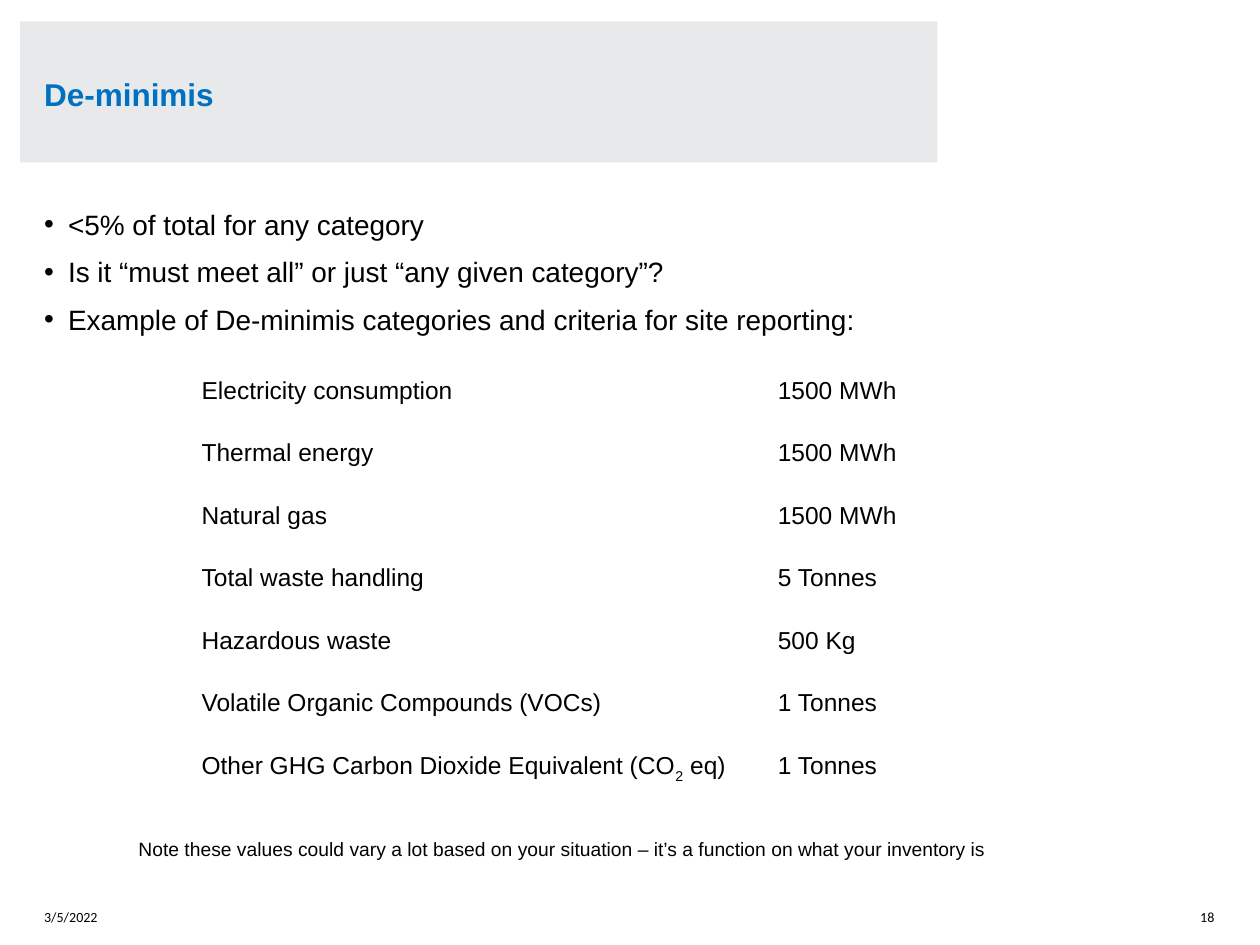
from lxml.etree import SubElement
from pptx import Presentation
from pptx.dml.color import RGBColor
from pptx.enum.shapes import MSO_SHAPE
from pptx.enum.text import MSO_ANCHOR, MSO_AUTO_SIZE, PP_ALIGN
from pptx.oxml.ns import qn
from pptx.util import Pt

COLORS = {"text": "000000", "title": "0070C0", "band": "E8E9EB", "border": "FFFFFF"}
BAND = (11.5, 12.2, 524.2, 80.6)
BULLETS = [
    "<5% of total for any category",
    "Is it “must meet all” or just “any given category”?",
    "Example of De-minimis categories and criteria for site reporting:",
]
# Each text is a list of runs; a (text, baseline) pair is a shifted run.
CRITERIA = [
    (["Electricity consumption"], ["1500 MWh"]),
    (["Thermal energy"], ["1500 MWh"]),
    (["Natural gas"], ["1500 MWh"]),
    (["Total waste handling"], ["5 Tonnes"]),
    (["Hazardous waste"], ["500 Kg"]),
    (["Volatile Organic Compounds (VOCs)"], ["1 Tonnes"]),
    (["Other GHG Carbon Dioxide Equivalent (CO", ("2", -25000), " eq)"], ["1 Tonnes"]),
]


class SlideBuilder:
    """Holds the text style and the current slide."""

    def __init__(self, slide, font="Arial", spacing=1.1):
        self.slide, self.font, self.spacing = slide, font, spacing

    def band(self, box):
        sp = self.slide.shapes.add_shape(MSO_SHAPE.RECTANGLE, *map(Pt, box))
        sp.shadow.inherit = False
        sp.fill.solid()
        sp.fill.fore_color.rgb = RGBColor.from_string(COLORS["band"])
        sp.line.fill.background()

    def add_runs(self, p, runs, size, color="text", bold=False, font=None):
        for item in runs:
            text, baseline = item if isinstance(item, tuple) else (item, 0)
            r = p.add_run()
            r.text = text
            r.font.name = font or self.font
            r.font.size = Pt(size)
            r.font.bold = bold
            r.font.color.rgb = RGBColor.from_string(COLORS[color])
            if baseline:
                r._r.get_or_add_rPr().set("baseline", str(baseline))

    def frame(self, box, insets=(0, 0), anchor=MSO_ANCHOR.TOP, wrap=True):
        """Add a text box; insets are horizontal and vertical."""
        tf = self.slide.shapes.add_textbox(*map(Pt, box)).text_frame
        tf.word_wrap = wrap
        tf.vertical_anchor = anchor
        tf.margin_left = tf.margin_right = Pt(insets[0])
        tf.margin_top = tf.margin_bottom = Pt(insets[1])
        return tf

    def title(self, box, text):
        p = self.frame(box, (13.7, 0), MSO_ANCHOR.MIDDLE).paragraphs[0]
        p.line_spacing = self.spacing
        self.add_runs(p, [text], 18, "title", bold=True)

    def bullets(self, box, lines, indent=Pt(13.7)):
        tf = self.frame(box)
        for i, line in enumerate(lines):
            p = tf.add_paragraph() if i else tf.paragraphs[0]
            pPr = p._p.get_or_add_pPr()
            pPr.set("marL", str(indent))
            pPr.set("indent", str(-indent))
            SubElement(pPr, qn("a:buFont"), typeface="Arial")
            SubElement(pPr, qn("a:buChar"), char="•")
            p.line_spacing = self.spacing
            p.space_after = Pt(6)
            self.add_runs(p, [line], 16)

    def note(self, box, text):
        tf = self.frame(box, (7.2, 3.6))
        tf.auto_size = MSO_AUTO_SIZE.SHAPE_TO_FIT_TEXT
        p = tf.paragraphs[0]
        p.line_spacing = self.spacing
        self.add_runs(p, [text], 11)

    def footer(self, box, text, align=PP_ALIGN.LEFT, wrap=True):
        p = self.frame(box, anchor=MSO_ANCHOR.BOTTOM, wrap=wrap).paragraphs[0]
        p.alignment = align
        self.add_runs(p, [text], 8, font="Calibri")

    def borders(self, cell):
        tcPr = cell._tc.get_or_add_tcPr()
        for i, side in enumerate(("lnL", "lnR", "lnT", "lnB")):
            ln = tcPr.makeelement(qn(f"a:{side}"), {"w": str(Pt(0.75))})
            fill = SubElement(ln, qn("a:solidFill"))
            SubElement(fill, qn("a:srgbClr"), val=COLORS["border"])
            tcPr.insert(i, ln)

    def table(self, box, rows):
        shape = self.slide.shapes.add_table(len(rows), len(rows[0]), *map(Pt, box))
        table = shape.table
        table.first_row = table.horz_banding = False
        for i, row in enumerate(rows):
            for j, runs in enumerate(row):
                cell = table.cell(i, j)
                cell.fill.background()
                self.borders(cell)
                p = cell.text_frame.paragraphs[0]
                p.line_spacing = self.spacing
                self.add_runs(p, runs, 14)


def main():
    prs = Presentation()
    prs.slide_width, prs.slide_height = Pt(720), Pt(540)
    s = SlideBuilder(prs.slides.add_slide(prs.slide_layouts[6]))
    s.band(BAND)
    s.footer((666, 508.3, 28, 20.2), "18", PP_ALIGN.RIGHT, wrap=False)
    s.title(BAND, "De-minimis")
    s.bullets((25.2, 116.6, 669, 386), BULLETS)
    s.footer((25.2, 508.3, 57, 20.2), "3/5/2022")
    s.table((108, 210.2, 658.6, 250.3), CRITERIA)
    s.note((72, 473.8, 522, 21), "Note these values could vary a lot based on your situation – "
           "it’s a function on what your inventory is")
    prs.save("out.pptx")


if __name__ == "__main__":
    main()
